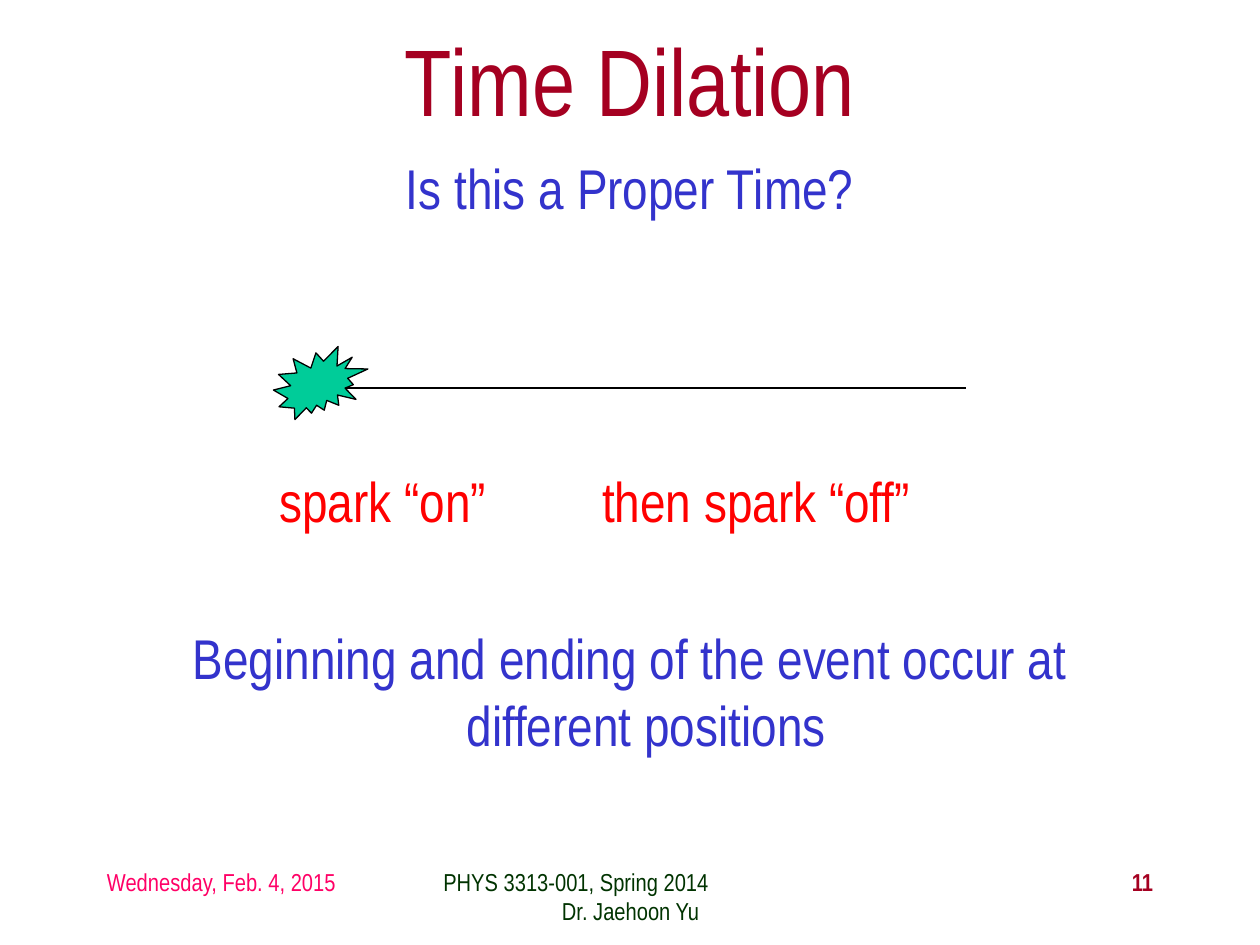
import dataclasses

import pptx
import pptx.dml.color
import pptx.enum.shapes
import pptx.enum.text
import pptx.oxml.ns
import pptx.util
from pptx.util import Inches

RGBColor = pptx.dml.color.RGBColor
ALIGN = pptx.enum.text.PP_ALIGN
ANCHOR = pptx.enum.text.MSO_ANCHOR

FONT = "Arial Narrow"
BLACK = RGBColor(0x00, 0x00, 0x00)
CRIMSON = RGBColor(0xA5, 0x00, 0x21)
BLUE = RGBColor(0x33, 0x33, 0xCC)
RED = RGBColor(0xFF, 0x00, 0x00)
PINK = RGBColor(0xFF, 0x00, 0x66)
DARK_GREEN = RGBColor(0x00, 0x33, 0x00)
TEAL = RGBColor(0x00, 0xCC, 0x99)
HAIRLINE = pptx.util.Pt(0.75)


@dataclasses.dataclass(frozen=True)
class Label:
    lines: tuple[str, ...]
    left: float
    top: float
    width: float
    height: float
    size: int
    color: RGBColor
    aligns: tuple = (ALIGN.CENTER,)
    anchor: ANCHOR = ANCHOR.TOP
    bold: bool = False
    hanging: float = 0


LABELS = (
    Label(("Time Dilation",), 0.75, 0, 8.5, 1.25, 54, CRIMSON, anchor=ANCHOR.MIDDLE),
    Label(("Is this a Proper Time?",), 0.75, 1.17, 8.5, 0.65, 32, BLUE),
    Label(("spark “on”",), 2.12, 3.65, 2.2, 0.65, 32, RED, (ALIGN.LEFT,)),
    Label(("then spark “off”",), 4.68, 3.65, 3, 0.65, 32, RED, (ALIGN.LEFT,)),
    Label(("Beginning and ending of the event occur at different positions",),
          0.75, 4.9, 8.5, 1.2, 32, BLUE, hanging=0.26),
    Label(("Wednesday, Feb. 4, 2015",), 0.75, 6.83, 2.08, 0.5, 14, PINK, (ALIGN.LEFT,)),
    Label(("11",), 7.17, 6.83, 2.08, 0.5, 14, CRIMSON, (ALIGN.RIGHT,), bold=True),
    Label(("PHYS 3313-001, Spring 2014", "Dr. Jaehoon Yu"),
          3.42, 6.83, 3.17, 0.5, 14, DARK_GREEN, (ALIGN.LEFT, ALIGN.CENTER)),
)


def draw_label(slide: pptx.slide.Slide, label: Label) -> None:
    box = slide.shapes.add_textbox(
        Inches(label.left), Inches(label.top), Inches(label.width), Inches(label.height))
    frame = box.text_frame
    frame.word_wrap = True
    frame.vertical_anchor = label.anchor
    for index, (line, align) in enumerate(zip(label.lines, label.aligns)):
        paragraph = frame.add_paragraph() if index else frame.paragraphs[0]
        paragraph.alignment = align
        if label.hanging:
            properties = paragraph._p.get_or_add_pPr()
            properties.set("marL", str(Inches(label.hanging)))
            properties.set("indent", str(-Inches(label.hanging)))
        run = paragraph.add_run()
        run.text = line
        run.font.name = FONT
        run.font.size = pptx.util.Pt(label.size)
        run.font.bold = label.bold
        run.font.color.rgb = label.color


def draw_track(slide: pptx.slide.Slide) -> None:
    track = slide.shapes.add_connector(
        pptx.enum.shapes.MSO_CONNECTOR.STRAIGHT,
        Inches(2.25), Inches(3.08), Inches(7.67), Inches(3.08))
    track.line.color.rgb = BLACK
    track.line.width = HAIRLINE
    track._element.spPr.append(pptx.oxml.parse_xml(
        f"<a:effectLst {pptx.oxml.ns.nsdecls('a')}/>"))


def draw_spark(slide: pptx.slide.Slide) -> None:
    spark = slide.shapes.add_shape(
        pptx.enum.shapes.MSO_SHAPE.EXPLOSION2,
        Inches(2.17), Inches(2.75), Inches(0.75), Inches(0.58))
    spark.shadow.inherit = False
    spark.fill.solid()
    spark.fill.fore_color.rgb = TEAL
    spark.line.color.rgb = BLACK
    spark.line.width = HAIRLINE


def main() -> None:
    deck = pptx.Presentation()
    deck.slide_width = Inches(10)
    deck.slide_height = Inches(7.5)
    slide = deck.slides.add_slide(deck.slide_layouts[6])
    draw_track(slide)
    draw_spark(slide)
    for label in LABELS:
        draw_label(slide, label)
    deck.save("out.pptx")


if __name__ == "__main__":
    main()
